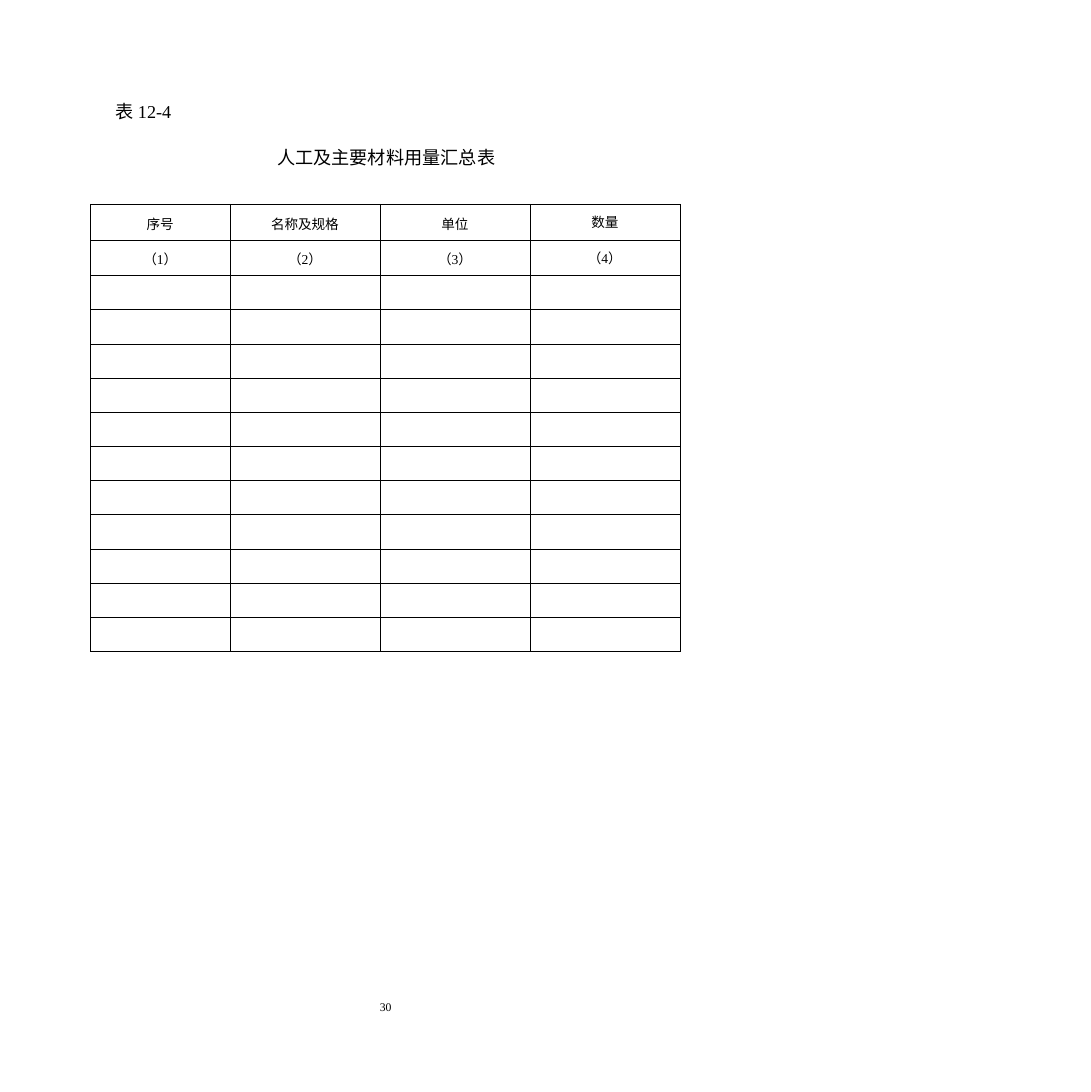
from lxml.etree import SubElement
from pptx import Presentation
from pptx.dml.color import RGBColor
from pptx.enum.text import MSO_ANCHOR, PP_ALIGN
from pptx.oxml.ns import qn
from pptx.util import Cm, Pt

COLORS = {"ink": "000000"}
CJK = "Noto Sans CJK SC"
LATIN = "Times New Roman"
HEADINGS = ["序号", "名称及规格", "单位", "数量"]
COLUMN_WIDTHS = [3.8, 4.08, 4.08, 4.08]
HEAD_ROWS, EMPTY_ROWS = 2, 11


def add_run(paragraph, text, size, font=CJK):
    run = paragraph.add_run()
    run.text = text
    run.font.size = Pt(size)
    run.font.name = font
    run.font.color.rgb = RGBColor.from_string(COLORS["ink"])
    SubElement(run.font._element, qn("a:ea")).set("typeface", font)


def indent(paragraph, left):
    properties = paragraph._p.get_or_add_pPr()
    properties.set("marL", str(int(left)))
    properties.set("indent", "0")


def add_text_frame(slide, left, top, width, height):
    """Add a wrapping text box without insets and return its frame."""
    frame = slide.shapes.add_textbox(left, top, width, height).text_frame
    frame.word_wrap = True
    frame.margin_left = frame.margin_top = 0
    frame.margin_right = frame.margin_bottom = 0
    return frame


def add_titles(slide):
    frame = add_text_frame(slide, Cm(3.15), Cm(2.74), Cm(10.36), Cm(2.03))
    table_number = frame.paragraphs[0]
    add_run(table_number, "表 ", 14)
    add_run(table_number, "12-4", 14, LATIN)

    title = frame.add_paragraph()
    indent(title, Cm(4.39))
    title.space_before = Pt(18.3)
    add_run(title, "人工及主要材料用量汇总表", 14)


def add_page_number(slide):
    frame = add_text_frame(slide, Cm(10.26), Cm(27.2), Cm(0.46), Cm(0.43))
    number = frame.paragraphs[0]
    indent(number, Cm(0.08))
    add_run(number, "30", 9, LATIN)


def style_cell(cell):
    """Clear the fill and insets and draw a thin border on all sides."""
    cell.margin_left = cell.margin_top = 0
    cell.margin_right = cell.margin_bottom = 0
    cell.vertical_anchor = MSO_ANCHOR.TOP
    properties = cell._tc.get_or_add_tcPr()
    for side in ("lnL", "lnR", "lnT", "lnB"):
        border = SubElement(properties, qn(f"a:{side}"), w=str(int(Pt(0.5))))
        fill = SubElement(border, qn("a:solidFill"))
        SubElement(fill, qn("a:srgbClr"), val=COLORS["ink"])
    cell.fill.background()


def add_materials_table(slide):
    table = slide.shapes.add_table(
        HEAD_ROWS + EMPTY_ROWS, len(HEADINGS),
        Cm(2.46), Cm(5.56), Cm(sum(COLUMN_WIDTHS)), Cm(12.17)).table
    table.first_row = table.horz_banding = False
    for column, width in zip(table.columns, COLUMN_WIDTHS):
        column.width = Cm(width)
    for index, row in enumerate(table.rows):
        row.height = Cm(0.97 if index < HEAD_ROWS else 0.93)
        for cell in row.cells:
            style_cell(cell)
            if index >= HEAD_ROWS:
                empty = cell.text_frame.paragraphs[0]
                SubElement(empty._p, qn("a:endParaRPr"), sz="1000")

    for column, heading in enumerate(HEADINGS):
        label = [(heading, CJK)]
        number = [("（", CJK), (str(column + 1), LATIN), ("）", CJK)]
        for row, parts in enumerate((label, number)):
            cell = table.cell(row, column)
            cell.margin_top = Cm(0.21 if column == 3 else 0.25)
            paragraph = cell.text_frame.paragraphs[0]
            paragraph.alignment = PP_ALIGN.CENTER
            for text, font in parts:
                add_run(paragraph, text, 10.5, font)


def main():
    presentation = Presentation()
    presentation.slide_width = Cm(29.69)
    presentation.slide_height = Cm(29.72)
    slide = presentation.slides.add_slide(presentation.slide_layouts[6])
    add_page_number(slide)
    add_titles(slide)
    add_materials_table(slide)
    presentation.save("out.pptx")


if __name__ == "__main__":
    main()
